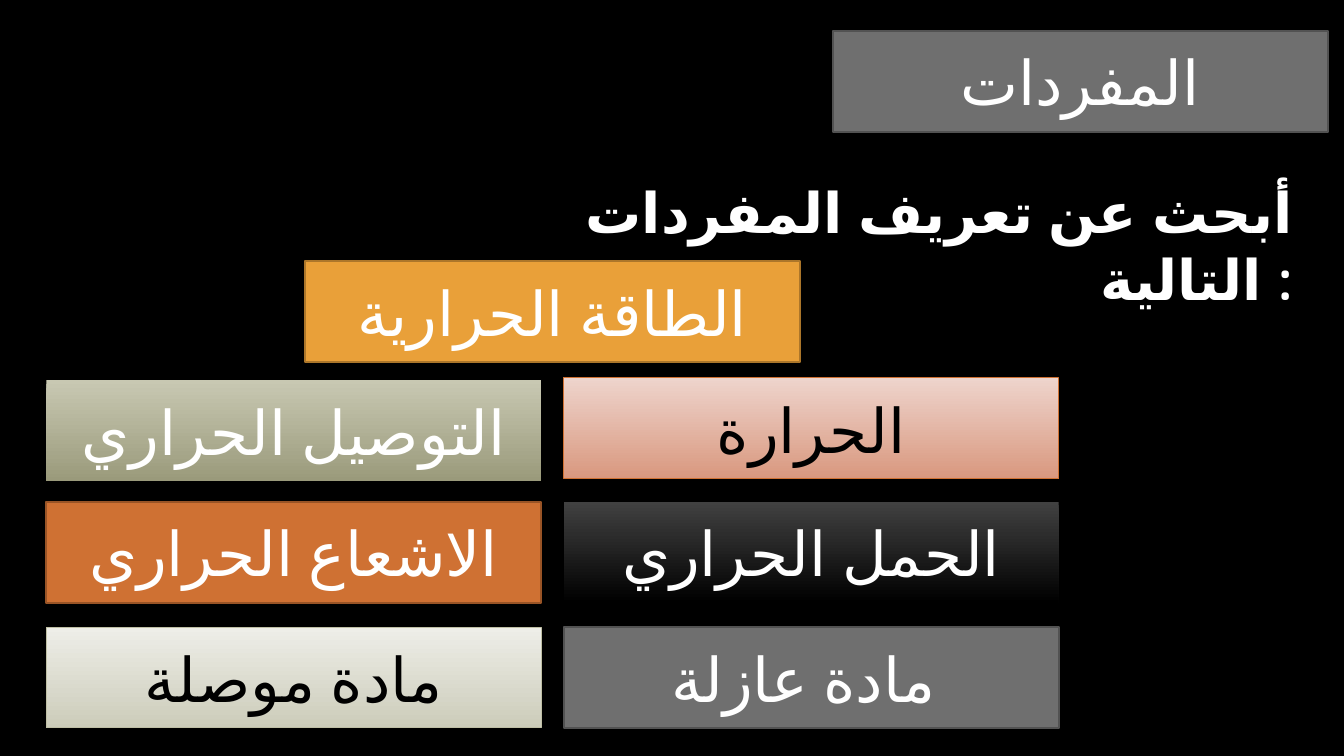
"""Build a vocabulary slide of heat terms laid out on a two-column grid."""
from dataclasses import dataclass

from pptx import Presentation
from pptx.dml.color import RGBColor
from pptx.enum.lang import MSO_LANGUAGE_ID
from pptx.enum.shapes import MSO_SHAPE
from pptx.enum.text import MSO_ANCHOR, PP_ALIGN
from pptx.shapes.autoshape import Shape
from pptx.slide import Slide
from pptx.util import Inches, Pt

COLORS = {
    "black": "000000", "white": "FFFFFF", "gray": "6F6F6F", "gray edge": "525252",
    "amber": "E9A039", "amber edge": "AC762A", "rust": "CF7133", "rust edge": "995426",
    "pink": "EED4CC", "salmon": "D9987F", "sage": "C8C8B2", "olive": "9A9A7B",
    "charcoal": "414141", "ivory": "EEEEE8", "sand": "CCCCBA", "sand edge": "BFBFA5",
}
FONT = "Quicksand"
GRID_LEFT, GRID_TOP = 0.46, 3.75
COLUMN_STEP, ROW_STEP = 5.13, 1.23
CARD_WIDTH, CARD_HEIGHT = 4.91, 1


@dataclass(frozen=True)
class Card:
    text: str
    column: float
    row: float
    fill: tuple[str, ...]
    edge: str = ""
    edge_width: float = 1.5
    text_color: str = "white"


TITLE = Card("المفردات", 1.52, -2.8, ("gray",), "gray edge")
TERMS = (
    Card("الطاقة الحرارية", 0.5, -0.94, ("amber",), "amber edge"),
    Card("الحرارة", 1, 0, ("pink", "salmon"), "rust", 0.75, "black"),
    Card("التوصيل الحراري", 0, 0.02, ("sage", "olive")),
    Card("الحمل الحراري", 1, 1, ("charcoal", "black")),
    Card("الاشعاع الحراري", 0, 1, ("rust",), "rust edge"),
    Card("مادة عازلة ", 1, 2.01, ("gray",), "gray edge"),
    Card("مادة موصلة", 0, 2.01, ("ivory", "sand"), "sand edge", 0.75, "black"),
)


def color(name: str) -> RGBColor:
    return RGBColor.from_string(COLORS[name])


def write_text(shape: Shape, text: str, size: int, text_color: str,
               alignment: PP_ALIGN, bold: bool = False) -> None:
    shape.text_frame.word_wrap = True
    paragraph = shape.text_frame.paragraphs[0]
    paragraph.text = text
    paragraph.alignment = alignment
    font = paragraph.font
    font.size, font.bold, font.name = Pt(size), bold, FONT
    font.color.rgb = color(text_color)
    for run in paragraph.runs:
        run.font.language_id = MSO_LANGUAGE_ID.ARABIC


def format_card(shape: Shape, card: Card) -> None:
    shape.left = Inches(GRID_LEFT + card.column * COLUMN_STEP)
    shape.top = Inches(GRID_TOP + card.row * ROW_STEP)
    shape.width, shape.height = Inches(CARD_WIDTH), Inches(CARD_HEIGHT)
    shape.shadow.inherit = False
    if len(card.fill) == 1:
        shape.fill.solid()
        shape.fill.fore_color.rgb = color(card.fill[0])
    else:
        shape.fill.gradient()
        shape.fill.gradient_angle = 270
        for stop, name in zip(shape.fill.gradient_stops, card.fill):
            stop.color.rgb = color(name)
    if card.edge:
        shape.line.color.rgb = color(card.edge)
        shape.line.width = Pt(card.edge_width)
    else:
        shape.line.fill.background()
    shape.text_frame.vertical_anchor = MSO_ANCHOR.MIDDLE
    write_text(shape, card.text, 44, card.text_color, PP_ALIGN.CENTER)


def add_instruction(slide: Slide) -> None:
    box = slide.shapes.add_textbox(Inches(4), Inches(1.71), Inches(8.92), Inches(0.77))
    write_text(box, "أبحث عن تعريف المفردات التالية :", 40, "white", PP_ALIGN.RIGHT, True)


def main() -> None:
    presentation = Presentation()
    presentation.slide_width, presentation.slide_height = Inches(13.33), Inches(7.5)
    slide = presentation.slides.add_slide(presentation.slide_layouts[5])
    slide.background.fill.solid()
    slide.background.fill.fore_color.rgb = color("black")
    format_card(slide.shapes.title, TITLE)
    add_instruction(slide)
    for card in TERMS:
        shape = slide.shapes.add_shape(MSO_SHAPE.RECTANGLE, 0, 0, 0, 0)
        format_card(shape, card)
    presentation.save("out.pptx")


if __name__ == "__main__":
    main()
